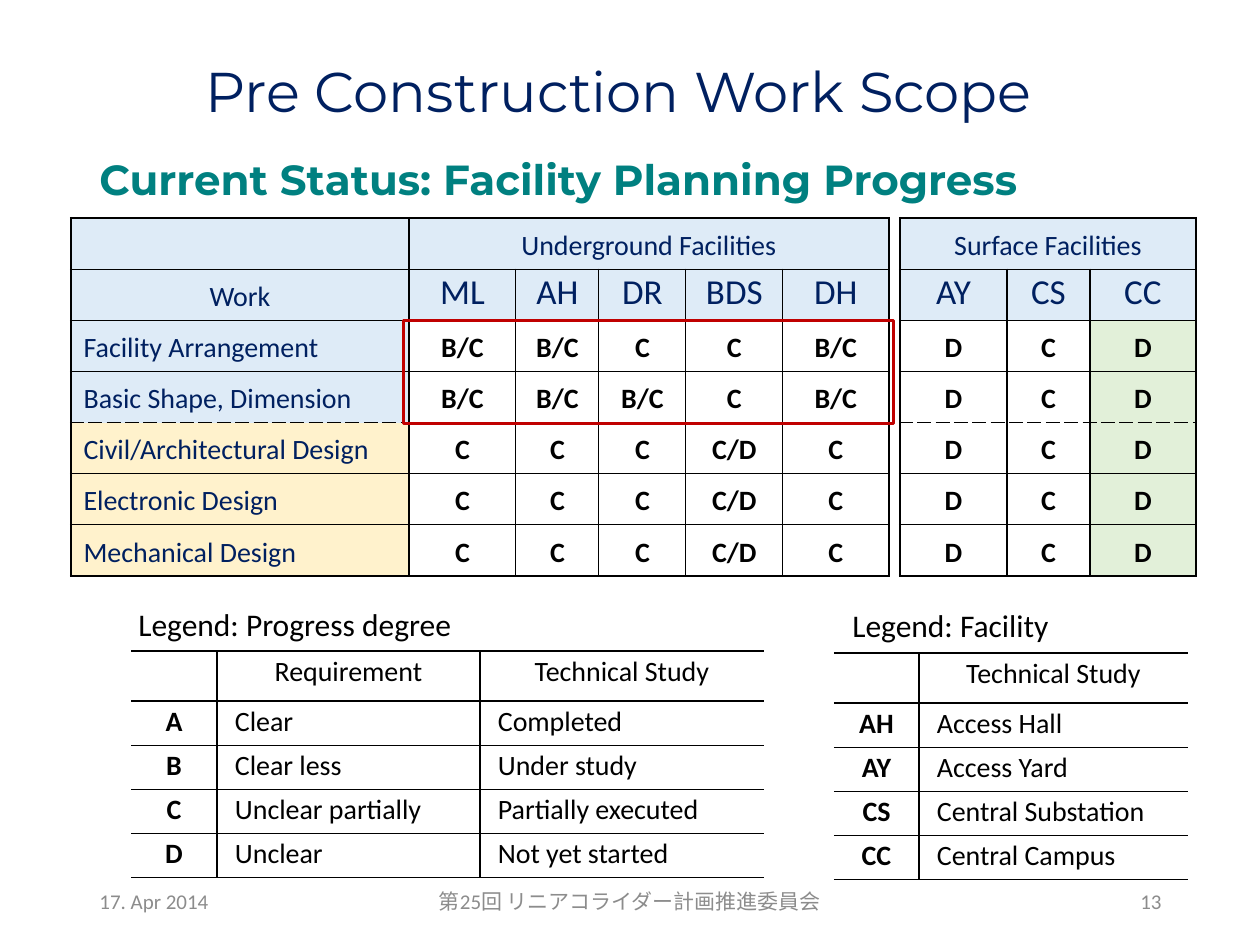
"""Build the facility planning progress slide with its tables and legends."""
import lxml.etree
import pptx
import pptx.dml.color
import pptx.enum.shapes
import pptx.enum.text
import pptx.oxml.ns
import pptx.util

SCALE = 914400 / 126
COLORS = {
    "navy": "002060", "teal": "008080", "black": "000000", "gray": "8C8C8C",
    "red": "C00000", "white": "FFFFFF", "blue": "DEEBF7", "cream": "FFF2CC",
    "green": "E2F0D9",
}
ALIGN = pptx.enum.text.PP_ALIGN
ANCHOR = pptx.enum.text.MSO_ANCHOR
THIN, DASHED, THICK = (0.75, "solid"), (1, "sysDash"), (1.5, "solid")
DASH_ROW = 4

UNDERGROUND_ROWS = [
    ["", "Underground Facilities", "", "", "", ""],
    ["Work", "ML", "AH", "DR", "BDS", "DH"],
    ["Facility Arrangement", "B/C", "B/C", "C", "C", "B/C"],
    ["Basic Shape, Dimension", "B/C", "B/C", "B/C", "C", "B/C"],
    ["Civil/Architectural Design", "C", "C", "C", "C/D", "C"],
    ["Electronic Design", "C", "C", "C", "C/D", "C"],
    ["Mechanical Design", "C", "C", "C", "C/D", "C"],
]
SURFACE_ROWS = [["Surface Facilities", "", ""], ["AY", "CS", "CC"]] + [["D", "C", "D"]] * 5
PROGRESS_ROWS = [
    ["", "Requirement", "Technical Study"],
    ["A", "Clear", "Completed"],
    ["B", "Clear less", "Under study"],
    ["C", "Unclear partially", "Partially executed"],
    ["D", "Unclear", "Not yet started"],
]
FACILITY_ROWS = [
    ["", "Technical Study"],
    ["AH", "Access Hall"],
    ["AY", "Access Yard"],
    ["CS", "Central Substation"],
    ["CC", "Central Campus"],
]


def px(length):
    """Turn a length in px into EMU."""
    return pptx.util.Emu(round(length * SCALE))


def rgb(name):
    """Look up a named colour."""
    return pptx.dml.color.RGBColor.from_string(COLORS[name])


def format_paragraph(paragraph, size, color, font="Calibri", bold=False, align=ALIGN.LEFT):
    """Set the font and alignment of a paragraph."""
    paragraph.alignment = align
    paragraph.font.name = font
    paragraph.font.size = pptx.util.Pt(size)
    paragraph.font.bold = bold
    paragraph.font.color.rgb = rgb(color)


def add_title(slide, text, left, top, width, height):
    """Place and format the title placeholder."""
    title = slide.shapes.title
    title.left, title.top, title.width, title.height = map(px, (left, top, width, height))
    title.text_frame.text = text
    title.text_frame.vertical_anchor = ANCHOR.MIDDLE
    paragraph = title.text_frame.paragraphs[0]
    paragraph.line_spacing = 0.9
    format_paragraph(paragraph, 32, "navy", "Montserrat", align=ALIGN.CENTER)


def add_text(slide, text, box, size, color, anchor=ANCHOR.TOP, wrap=True, **style):
    """Add a one-paragraph text box."""
    text_frame = slide.shapes.add_textbox(*map(px, box)).text_frame
    text_frame.word_wrap = wrap
    text_frame.vertical_anchor = anchor
    text_frame.text = text
    format_paragraph(text_frame.paragraphs[0], size, color, **style)


def add_table(slide, left, top, widths, heights, rows):
    """Add a table filled with text and return it."""
    frame = slide.shapes.add_table(
        len(rows), len(widths), px(left), px(top), px(sum(widths)), px(sum(heights)))
    table = frame.table
    for column, width in zip(table.columns, widths):
        column.width = px(width)
    for row, height in zip(table.rows, heights):
        row.height = px(height)
    for row_index, texts in enumerate(rows):
        for column_index, text in enumerate(texts):
            table.cell(row_index, column_index).text = text
    return table


def set_borders(cell, **borders):
    """Draw the L, R, T and B borders of a cell, None meaning no line."""
    properties = cell._tc.get_or_add_tcPr()
    qn = pptx.oxml.ns.qn
    for side in "LRTB":
        line = lxml.etree.SubElement(properties, qn(f"a:ln{side}"))
        if borders[side] is None:
            lxml.etree.SubElement(line, qn("a:noFill"))
            continue
        width, dash = borders[side]
        line.set("w", str(pptx.util.Pt(width)))
        fill = lxml.etree.SubElement(line, qn("a:solidFill"))
        lxml.etree.SubElement(fill, qn("a:srgbClr"), val=COLORS["black"])
        lxml.etree.SubElement(line, qn("a:prstDash"), val=dash)


def format_cell(cell, fill, spacing, size, color, **style):
    """Set the fill and text style of a cell."""
    cell.fill.solid()
    cell.fill.fore_color.rgb = rgb(fill)
    paragraph = cell.text_frame.paragraphs[0]
    paragraph.line_spacing = pptx.util.Pt(spacing)
    format_paragraph(paragraph, size, color, **style)


def status_fill(row, column, work_column, green_column):
    """Choose the fill of a status cell."""
    if row < 2:
        return "blue"
    if column == work_column:
        return "blue" if row < DASH_ROW else "cream"
    return "green" if column == green_column else "white"


def add_status_table(slide, left, widths, rows, heading_column, work_column=None, green_column=None):
    """Add a framed status table with a merged heading."""
    table = add_table(slide, left, 218, widths, [51] * len(rows), rows)
    last_row, last_column = len(rows) - 1, len(widths) - 1
    table.cell(0, heading_column).merge(table.cell(0, last_column))
    for row in range(len(rows)):
        for column in range(len(widths)):
            cell = table.cell(row, column)
            if cell.is_spanned:
                continue
            set_borders(
                cell,
                L=THIN if column else THICK,
                R=THICK if column + cell.span_width > last_column else THIN,
                T=THICK if row == 0 else DASHED if row == DASH_ROW else THIN,
                B=THICK if row == last_row else DASHED if row == DASH_ROW - 1 else THIN)
            is_work = column == work_column
            is_status = row > 1 and not is_work
            format_cell(
                cell, status_fill(row, column, work_column, green_column), 22,
                20 if row == 1 and not is_work else 16,
                "black" if is_status else "navy", bold=is_status,
                align=ALIGN.LEFT if is_work and row > 1 else ALIGN.CENTER)


def add_legend(slide, left, top, widths, rows):
    """Add a legend table that is open at its sides."""
    table = add_table(slide, left, top, widths, [50] + [44] * (len(rows) - 1), rows)
    for row in range(len(rows)):
        for column in range(len(widths)):
            cell = table.cell(row, column)
            set_borders(cell, L=THIN if column else None,
                        R=THIN if column < len(widths) - 1 else None, T=THIN, B=THIN)
            is_entry = row > 0 and column > 0
            if is_entry:
                cell.margin_left = px(18)
            format_cell(cell, "white", 18, 16, "black", bold=row > 0 and column == 0,
                        align=ALIGN.LEFT if is_entry else ALIGN.CENTER)


def add_outline(slide, left, top, width, height):
    """Add a red unfilled frame."""
    shape = slide.shapes.add_shape(
        pptx.enum.shapes.MSO_SHAPE.RECTANGLE, *map(px, (left, top, width, height)))
    shape.shadow.inherit = False
    shape.fill.background()
    shape.line.color.rgb = rgb("red")
    shape.line.width = pptx.util.Pt(1.75)


def main():
    """Build and save the slide."""
    presentation = pptx.Presentation()
    presentation.slide_width, presentation.slide_height = px(1260), px(945)
    slide = presentation.slides.add_slide(presentation.slide_layouts[5])
    add_title(slide, "Pre Construction Work Scope", 79, 24, 1080, 141)
    add_status_table(slide, 71, [338, 107, 83, 87, 97, 106], UNDERGROUND_ROWS, 1, work_column=0)
    add_status_table(slide, 900, [107, 83, 106], SURFACE_ROWS, 0, green_column=2)
    add_text(slide, "Current Status: Facility Planning Progress", (87, 147, 1086, 63),
             24, "teal", font="Montserrat", bold=True)
    add_legend(slide, 131, 651, [86, 263, 284], PROGRESS_ROWS)
    add_text(slide, "Legend: Progress degree", (126, 599, 343, 50), 18, "black", wrap=False)
    add_legend(slide, 834, 653, [85, 269], FACILITY_ROWS)
    add_text(slide, "Legend: Facility", (840, 600, 289, 50), 18, "black")
    add_outline(slide, 404, 321, 490, 103)
    for text, left, width, align in (
            ("17. Apr 2014", 87, 284, ALIGN.LEFT),
            ("第25回 リニアコライダー計画推進委員会", 417, 426, ALIGN.CENTER),
            ("13", 890, 284, ALIGN.RIGHT)):
        add_text(slide, text, (left, 876, width, 50), 12, "gray", ANCHOR.MIDDLE, align=align)
    presentation.save("out.pptx")


if __name__ == "__main__":
    main()
